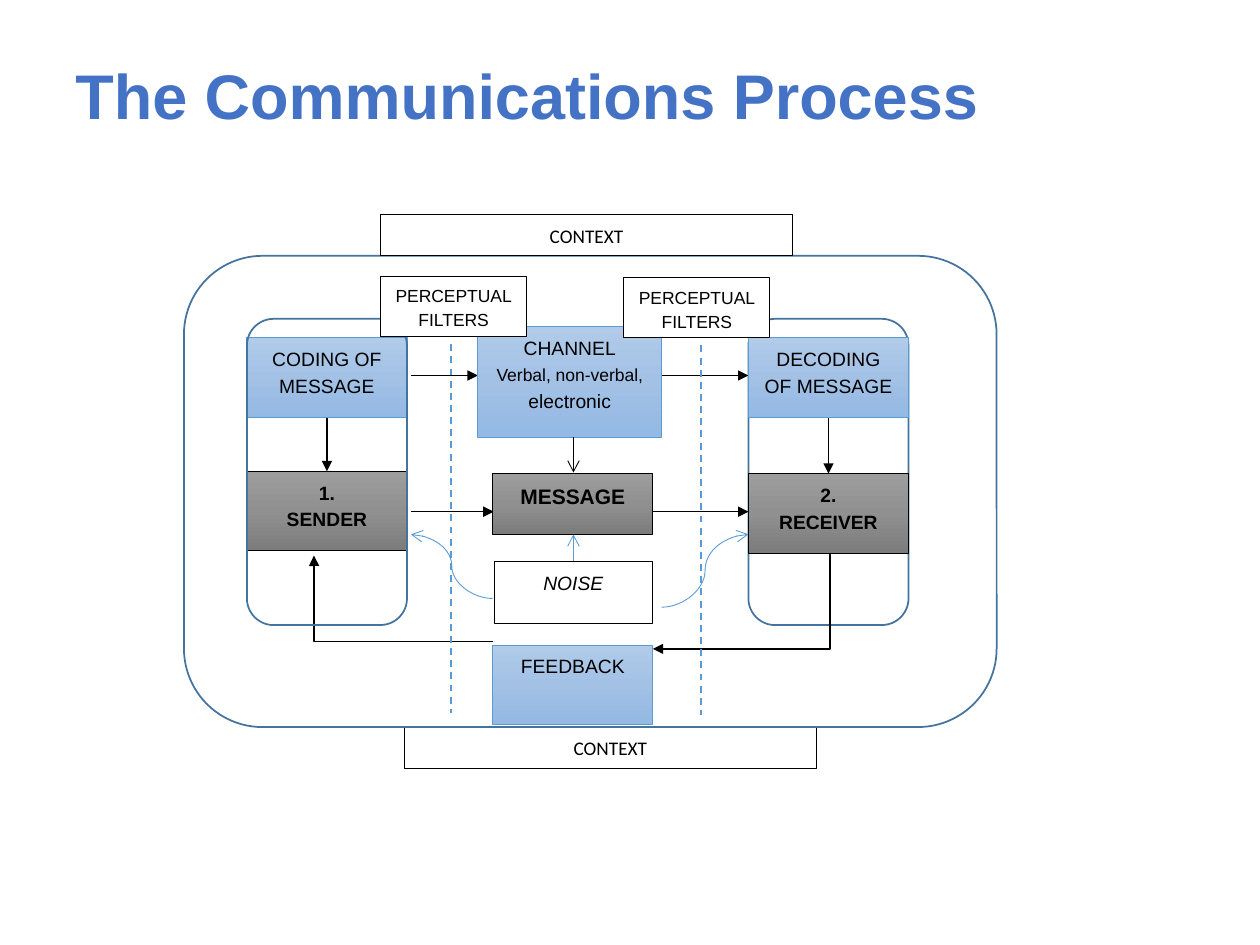
from copy import deepcopy

from lxml import etree
from pptx import Presentation
from pptx.dml.color import RGBColor
from pptx.enum.dml import MSO_LINE
from pptx.enum.shapes import MSO_CONNECTOR, MSO_SHAPE
from pptx.enum.text import MSO_ANCHOR, PP_ALIGN
from pptx.oxml.ns import qn
from pptx.util import Pt

BLACK = RGBColor(0x00, 0x00, 0x00)
WHITE = RGBColor(0xFF, 0xFF, 0xFF)
TITLE_BLUE = RGBColor(0x44, 0x72, 0xC4)
LINE_BLUE = RGBColor(0x5B, 0x9B, 0xD5)
FRAME_BLUE = RGBColor(0x43, 0x73, 0x9E)
BLUE_FADE = [RGBColor(0xB1, 0xCB, 0xE9), RGBColor(0xA3, 0xC1, 0xE5), RGBColor(0x93, 0xB9, 0xE4)]
GREY_FADE = [RGBColor(0x9D, 0x9D, 0x9D), RGBColor(0x90, 0x90, 0x90), RGBColor(0x7C, 0x7C, 0x7C)]

RECT, ROUNDED = MSO_SHAPE.RECTANGLE, MSO_SHAPE.ROUNDED_RECTANGLE
STRAIGHT, ELBOW, CURVE = MSO_CONNECTOR.STRAIGHT, MSO_CONNECTOR.ELBOW, MSO_CONNECTOR.CURVE
DASH = MSO_LINE.DASH
CENTER, TOP, MIDDLE = PP_ALIGN.CENTER, MSO_ANCHOR.TOP, MSO_ANCHOR.MIDDLE

COLUMN_WIDTH, CELL_HEIGHT = 91.5, 45.4


def add_span(para, text, size, color=BLACK, font="Arial", bold=False, italic=False):
    span = para.add_run()
    span.text = text
    span.font.name, span.font.size = font, Pt(size)
    span.font.bold, span.font.italic = bold, italic
    span.font.color.rgb = color


def fade(fill, colors):
    """Fill from top to bottom through three colours."""
    fill.gradient()
    fill.gradient_angle = 270
    first = fill._xPr.find(".//" + qn("a:gs"))
    first.addnext(deepcopy(first))
    for stop, color, position in zip(fill.gradient_stops, colors, (0, 0.5, 1)):
        stop.color.rgb = color
        stop.position = position


class Diagram:
    """Draws parts on a page, in points from the diagram's left top corner."""

    def __init__(self, page, left, top):
        self.shapes, self.left, self.top = page.shapes, left, top

    def add_box(self, left, top, width, height, line, weight, kind=RECT):
        box = self.shapes.add_shape(kind, Pt(self.left + left), Pt(self.top + top),
                                    Pt(width), Pt(height))
        box.shadow.inherit = False
        box.fill.background()
        box.line.color.rgb, box.line.width = line, Pt(weight)
        return box

    def add_label(self, left, top, width, height, lines, fill=None, line=BLACK,
                  weight=0.5, size=11, **style):
        """Each line is a list of spans, each a text or a (text, size) pair."""
        box = self.add_box(left, top, width, height, line, weight)
        if fill:
            fade(box.fill, fill)
        else:
            box.fill.solid()
            box.fill.fore_color.rgb = WHITE
        frame = box.text_frame
        frame.word_wrap, frame.vertical_anchor = True, TOP
        for number, spans in enumerate(lines):
            para = frame.add_paragraph() if number else frame.paragraphs[0]
            para.alignment, para.line_spacing = CENTER, 1.15
            for span in spans:
                text, span_size = (span, size) if isinstance(span, str) else span
                add_span(para, text, span_size, **style)

    def add_line(self, start, end, kind=STRAIGHT, color=BLACK, weight=0.75,
                 head="triangle", dash=None, bend=None):
        (x1, y1), (x2, y2) = start, end
        line = self.shapes.add_connector(kind, Pt(self.left + x1), Pt(self.top + y1),
                                         Pt(self.left + x2), Pt(self.top + y2))
        line.line.color.rgb, line.line.width = color, Pt(weight)
        if dash:
            line.line.dash_style = dash
        properties = line._element.spPr
        if head:
            etree.SubElement(properties.find(qn("a:ln")), qn("a:tailEnd"), type=head)
        if bend is not None:
            guides = properties.find(qn("a:prstGeom")).get_or_add_avLst()
            etree.SubElement(guides, qn("a:gd"), name="adj1", fmla=f"val {bend}")
        etree.SubElement(properties, qn("a:effectLst"))


def draw_title(page, left, top, width, height):
    box = page.shapes.add_textbox(Pt(left), Pt(top), Pt(width), Pt(height))
    box.text_frame.word_wrap = True
    box.text_frame.vertical_anchor = MIDDLE
    para = box.text_frame.paragraphs[0]
    para.line_spacing = 0.9
    add_span(para, "The Communications Process", 36, TITLE_BLUE, bold=True)


def draw_frame(diagram, left):
    diagram.add_box(left, 59.8, COLUMN_WIDTH, 175, FRAME_BLUE, 1, ROUNDED)


def draw_party(diagram, left, top, coding, number, name):
    """The coding step, and the party below it, of one end of the process."""
    middle = left + COLUMN_WIDTH / 2
    diagram.add_line((middle, 116), (middle, top))
    diagram.add_label(left, 70.6, COLUMN_WIDTH, CELL_HEIGHT, [[coding]], BLUE_FADE, LINE_BLUE)
    diagram.add_label(left, top, COLUMN_WIDTH, CELL_HEIGHT, [[number], [name]],
                      GREY_FADE, bold=True)


def draw_context(diagram, left, top):
    diagram.add_label(left, top, 235.4, 23.7, [["CONTEXT"]], weight=0.75, font="Calibri")


def draw_filter(diagram, label_left, label_top, line_left):
    diagram.add_line((line_left, label_top + 39), (line_left, label_top + 250),
                     color=LINE_BLUE, weight=1, head=None, dash=DASH)
    diagram.add_label(label_left, label_top, 83.5, 34.6,
                      [["PERCEPTUAL"], ["FILTERS"]], size=10)


def draw_flow(diagram):
    """Arrows from the sender through the middle to the receiver."""
    for y, middle_left, middle_right in ((92.2, 168, 268), (170, 177, 268)):
        diagram.add_line((129.7, y), (middle_left, y))
        diagram.add_line((middle_right, y), (322.6, y))


def draw_noise_arrows(diagram):
    for start, end in (((222.6, 198.7), (222.6, 183)),
                       ((273, 224.6), (322.6, 183)),
                       ((176.5, 219.6), (129.7, 183))):
        diagram.add_line(start, end, CURVE, LINE_BLUE, 0.5, "arrow")


def draw_middle(diagram, left):
    diagram.add_label(left, 148.3, COLUMN_WIDTH, 34.6, [["MESSAGE"]], GREY_FADE,
                      size=12, bold=True)
    diagram.add_label(left, 246.2, COLUMN_WIDTH, CELL_HEIGHT, [["FEEDBACK"]],
                      BLUE_FADE, LINE_BLUE)
    diagram.add_label(left - 8.5, 64.1, 105, 63.4,
                      [["CHANNEL"], [("Verbal, non-verbal,", 10), " electronic"]],
                      BLUE_FADE, LINE_BLUE)
    diagram.add_label(left + 1, 198.7, 90, 35.3, [["NOISE"]], italic=True)
    diagram.add_line((222.6, 127.4), (222.6, 147.6), weight=0.5, head="arrow")


def draw_feedback_arrows(diagram):
    diagram.add_line((368.8, 194.4), (268, 248.4), ELBOW, bend=-500)
    diagram.add_line((176.5, 244.1), (74.3, 195.1), ELBOW, bend=99900)


def draw_process(page, left, top):
    diagram = Diagram(page, left, top)
    sender_left, middle_left, receiver_left = 36, 176.5, 322.6
    draw_noise_arrows(diagram)
    draw_frame(diagram, receiver_left)
    draw_flow(diagram)
    draw_context(diagram, 126, 293)
    diagram.add_box(0, 23.8, 464.4, 269.3, FRAME_BLUE, 1, ROUNDED)
    draw_party(diagram, sender_left, 146.9, "CODING OF MESSAGE", "1.", "SENDER")
    draw_party(diagram, receiver_left, 148.3, "DECODING OF MESSAGE", "2.", "RECEIVER")
    draw_middle(diagram, middle_left)
    draw_feedback_arrows(diagram)
    draw_context(diagram, 112.4, 0)
    draw_frame(diagram, sender_left)
    draw_filter(diagram, 251.4, 36, 295.3)
    draw_filter(diagram, 112.4, 35.3, 152.8)


def main():
    deck = Presentation()
    deck.slide_width, deck.slide_height = Pt(720), Pt(540)
    page = deck.slides.add_slide(deck.slide_layouts[6])
    draw_title(page, 36, 18.7, 648.7, 76.3)
    draw_process(page, 105.1, 122.4)
    deck.save("out.pptx")


if __name__ == "__main__":
    main()
